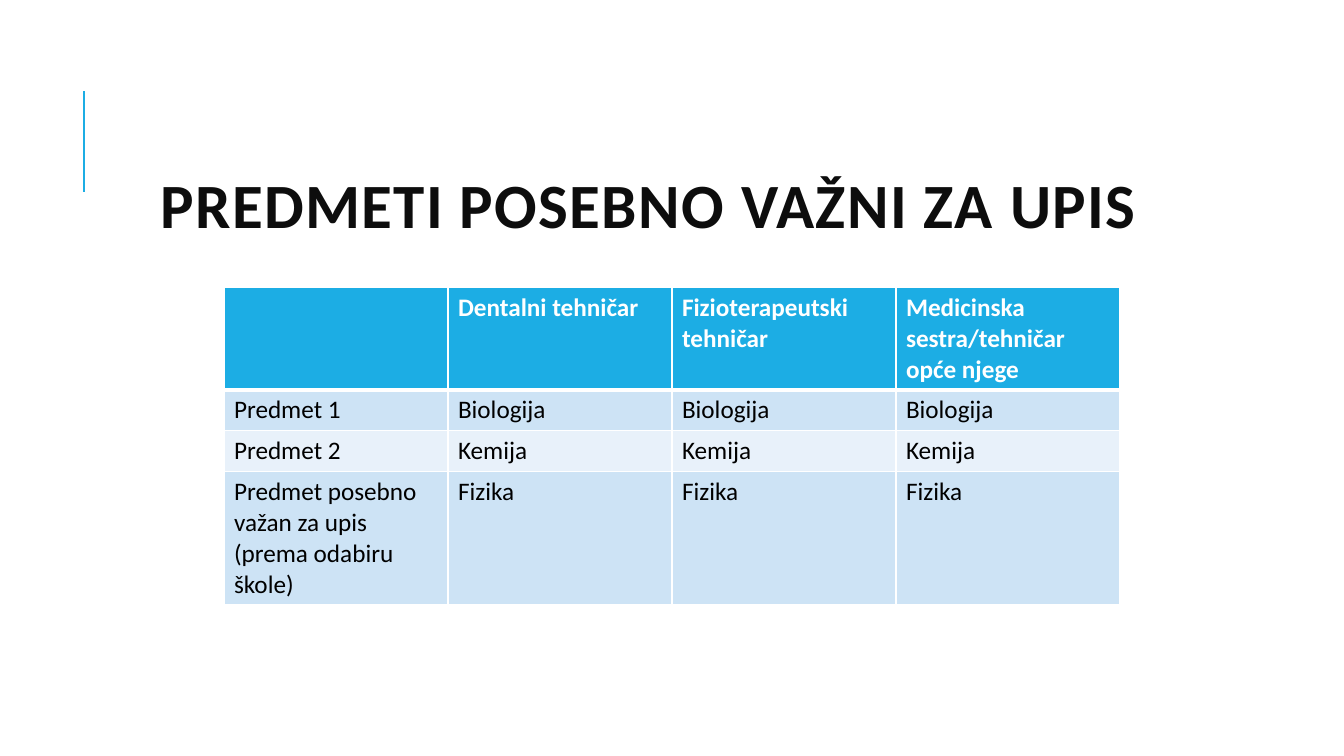
from pptx import Presentation
from pptx.dml.color import RGBColor
from pptx.enum.shapes import MSO_CONNECTOR
from pptx.enum.text import MSO_ANCHOR, MSO_AUTO_SIZE, PP_ALIGN
from pptx.oxml.ns import qn
from pptx.util import Pt
from lxml.etree import SubElement

BLUE = RGBColor(0x1C, 0xAD, 0xE4)
BAND = RGBColor(0xCD, 0xE3, 0xF5)
PALE = RGBColor(0xE8, 0xF1, 0xFA)
INK = RGBColor(0x0D, 0x0D, 0x0D)
BLACK = RGBColor(0, 0, 0)
WHITE = RGBColor(0xFF, 0xFF, 0xFF)

ROWS = [
    ["", "Dentalni tehničar", "Fizioterapeutski tehničar",
     "Medicinska sestra/tehničar opće njege"],
    ["Predmet 1"] + ["Biologija"] * 3,
    ["Predmet 2"] + ["Kemija"] * 3,
    ["Predmet posebno važan za upis (prema odabiru škole)"] + ["Fizika"] * 3,
]
HEIGHTS = [73, 29.2, 29.2, 95]


def write(frame, text, size=18, color=BLACK, bold=False,
          align=PP_ALIGN.LEFT, lead=1.0, space=0):
    para = frame.paragraphs[0]
    para.alignment = align
    para.line_spacing = lead
    run = para.add_run()
    run.text = text
    font = run.font
    font.name, font.size, font.bold = "Calibri", Pt(size), bold
    font.color.rgb = color
    if space:
        font._element.set("spc", str(int(space * 100)))


def edge(cell, widths):
    """Draw white borders; widths maps a side tag to points."""
    props = cell._tc.get_or_add_tcPr()
    for spot, (side, width) in enumerate(widths.items()):
        line = props.makeelement(qn(f"a:{side}"), {"w": str(Pt(width))})
        fill = SubElement(line, qn("a:solidFill"))
        SubElement(fill, qn("a:srgbClr"), val=str(WHITE))
        props.insert(spot, line)


def add_rule(slide, left, top, height):
    rule = slide.shapes.add_connector(
        MSO_CONNECTOR.STRAIGHT, Pt(left), Pt(top + height), Pt(left), Pt(top))
    rule.line.color.rgb = BLUE
    rule.line.width = Pt(1.5)
    SubElement(rule._element.spPr, qn("a:effectLst"))


def add_title(slide, left, top, width, height):
    title = slide.shapes.title
    title.left, title.top = Pt(left), Pt(top)
    title.width, title.height = Pt(width), Pt(height)
    frame = title.text_frame
    frame.word_wrap = True
    frame.auto_size = MSO_AUTO_SIZE.NONE
    frame.vertical_anchor = MSO_ANCHOR.TOP
    # The heading sits low in its box
    frame.margin_top, frame.margin_bottom = Pt(82.5), Pt(0)
    write(frame, "PREDMETI POSEBNO VAŽNI ZA UPIS", size=45, color=INK,
          bold=True, align=PP_ALIGN.CENTER, lead=0.8, space=1)


def add_grid(slide, left, top, width):
    count = len(ROWS[0])
    table = slide.shapes.add_table(
        len(ROWS), count, Pt(left), Pt(top), Pt(width),
        Pt(sum(HEIGHTS))).table
    for col in table.columns:
        col.width = Pt(width / count)
    for i, (texts, height) in enumerate(zip(ROWS, HEIGHTS)):
        table.rows[i].height = Pt(height)
        head = i == 0
        for j, text in enumerate(texts):
            cell = table.cell(i, j)
            cell.fill.solid()
            cell.fill.fore_color.rgb = BLUE if head else BAND if i % 2 else PALE
            edge(cell, {"lnL": 1, "lnR": 1, "lnT": 3 if i == 1 else 1,
                        "lnB": 3 if head else 1})
            if text:
                write(cell.text_frame, text, bold=head,
                      color=WHITE if head else BLACK)


def main():
    deck = Presentation()
    deck.slide_width, deck.slide_height = Pt(960), Pt(540)
    slide = deck.slides.add_slide(deck.slide_layouts[5])
    # Accent line, heading and table of subjects
    add_rule(slide, 60, 65, 72)
    add_title(slide, 80.6, 46.1, 765.4, 118.1)
    add_grid(slide, 160, 205.4, 640)
    deck.save("out.pptx")


if __name__ == "__main__":
    main()
